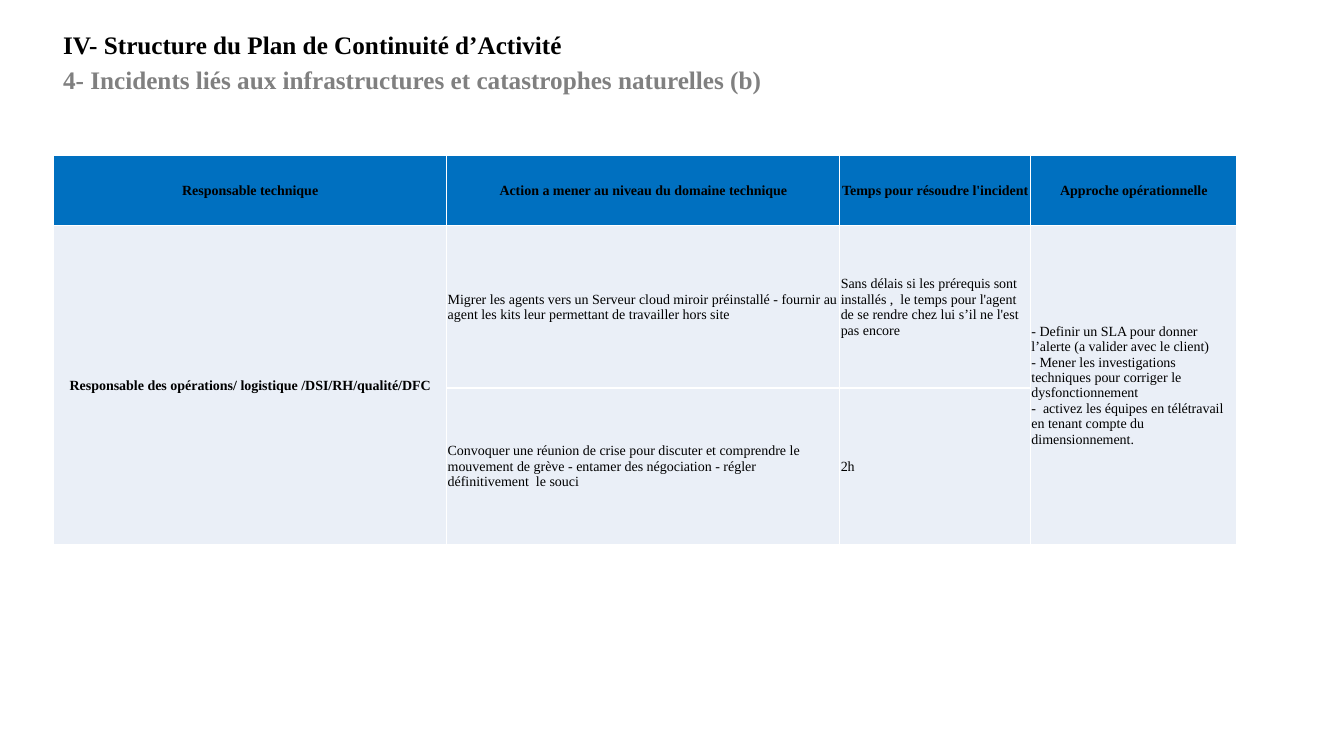
from lxml.etree import SubElement
from pptx import Presentation
from pptx.dml.color import RGBColor
from pptx.enum.text import MSO_ANCHOR as Anchor, MSO_AUTO_SIZE as AutoSize, PP_ALIGN as Align
from pptx.oxml.ns import qn
from pptx.util import Pt

BLACK = RGBColor(0x00, 0x00, 0x00)
GREY = RGBColor(0x80, 0x80, 0x80)
BLUE = RGBColor(0x00, 0x70, 0xC0)
PALE = RGBColor(0xEA, 0xEF, 0xF7)
WHITE = RGBColor(0xFF, 0xFF, 0xFF)
FONT = "Times New Roman"

HEADINGS = [
    ("IV- Structure du Plan de Continuité d’Activité", BLACK, 418),
    ("4- Incidents liés aux infrastructures et catastrophes naturelles (b)", GREY, 582),
]
HEADERS = [
    "Responsable technique",
    "Action a mener au niveau du domaine technique",
    "Temps pour résoudre l'incident",
    "Approche opérationnelle",
]
OWNER = "Responsable des opérations/ logistique /DSI/RH/qualité/DFC"
INCIDENTS = [
    ("Migrer les agents vers un Serveur cloud miroir préinstallé - fournir au agent "
     "les kits leur permettant de travailler hors site",
     "Sans délais si les prérequis sont installés ,  le temps pour l'agent de se rendre "
     "chez lui s’il ne l'est pas encore"),
    ("Convoquer une réunion de crise pour discuter et comprendre le mouvement de grève "
     "- entamer des négociation - régler définitivement  le souci",
     "2h"),
]
APPROACH = [
    "- Definir un SLA pour donner l’alerte (a valider avec le client)",
    "- Mener les investigations techniques pour corriger le dysfonctionnement",
    "-  activez les équipes en télétravail en tenant compte du dimensionnement.",
]
COLUMN_WIDTHS = [280.8, 280.8, 136.2, 147.5]
ROW_HEIGHTS = [50.4, 115.9, 111.6]


def write(frame, *lines, size=10, color=BLACK, bold=False, align=Align.LEFT):
    """Fill a text frame with one paragraph per line."""
    for index, line in enumerate(lines):
        para = frame.add_paragraph() if index else frame.paragraphs[0]
        para.alignment = align
        span = para.add_run()
        span.text = line
        span.font.name = FONT
        span.font.size = Pt(size)
        span.font.bold = bold
        span.font.color.rgb = color


def style_cell(cell, fill):
    """Set margins, white borders and fill of a cell."""
    cell.vertical_anchor = Anchor.MIDDLE
    cell.margin_left = cell.margin_right = cell.margin_top = Pt(0.7)
    cell.margin_bottom = 0
    properties = cell._tc.get_or_add_tcPr()
    for side in ("a:lnL", "a:lnR", "a:lnT", "a:lnB"):
        line = SubElement(properties, qn(side), w=str(Pt(1)))
        solid = SubElement(line, qn("a:solidFill"))
        SubElement(solid, qn("a:srgbClr"), val=str(WHITE))
    cell.fill.solid()
    cell.fill.fore_color.rgb = fill


def add_headings(page, left, top, pitch=25.2, height=29):
    for index, (text, color, width) in enumerate(HEADINGS):
        box = page.shapes.add_textbox(
            Pt(left), Pt(top + index * pitch), Pt(width), Pt(height))
        box.text_frame.word_wrap = True
        box.text_frame.auto_size = AutoSize.SHAPE_TO_FIT_TEXT
        write(box.text_frame, text, size=18, color=color, bold=True)


def add_incident_table(page, left, top):
    table = page.shapes.add_table(
        len(ROW_HEIGHTS), len(COLUMN_WIDTHS), Pt(left), Pt(top),
        Pt(sum(COLUMN_WIDTHS)), Pt(sum(ROW_HEIGHTS))).table
    table.horz_banding = False
    for column, width in zip(table.columns, COLUMN_WIDTHS):
        column.width = Pt(width)
    for row_index, height in enumerate(ROW_HEIGHTS):
        table.rows[row_index].height = Pt(height)
        for cell in table.rows[row_index].cells:
            style_cell(cell, PALE if row_index else BLUE)

    # Header row
    for column_index, header in enumerate(HEADERS):
        write(table.cell(0, column_index).text_frame, header, bold=True, align=Align.CENTER)

    # Outer columns span both incidents
    for column_index in (0, 3):
        table.cell(1, column_index).merge(table.cell(2, column_index))
    write(table.cell(1, 0).text_frame, OWNER, bold=True, align=Align.CENTER)
    write(table.cell(1, 3).text_frame, *APPROACH)

    # Action and delay of each incident
    for row_index, (action, delay) in enumerate(INCIDENTS, start=1):
        write(table.cell(row_index, 1).text_frame, action)
        write(table.cell(row_index, 2).text_frame, delay)


def main():
    deck = Presentation()
    deck.slide_width, deck.slide_height = Pt(960), Pt(540)
    page = deck.slides.add_slide(deck.slide_layouts[6])
    add_headings(page, left=38, top=17.3)
    add_incident_table(page, left=38.3, top=110.9)
    deck.save("out.pptx")


if __name__ == "__main__":
    main()
